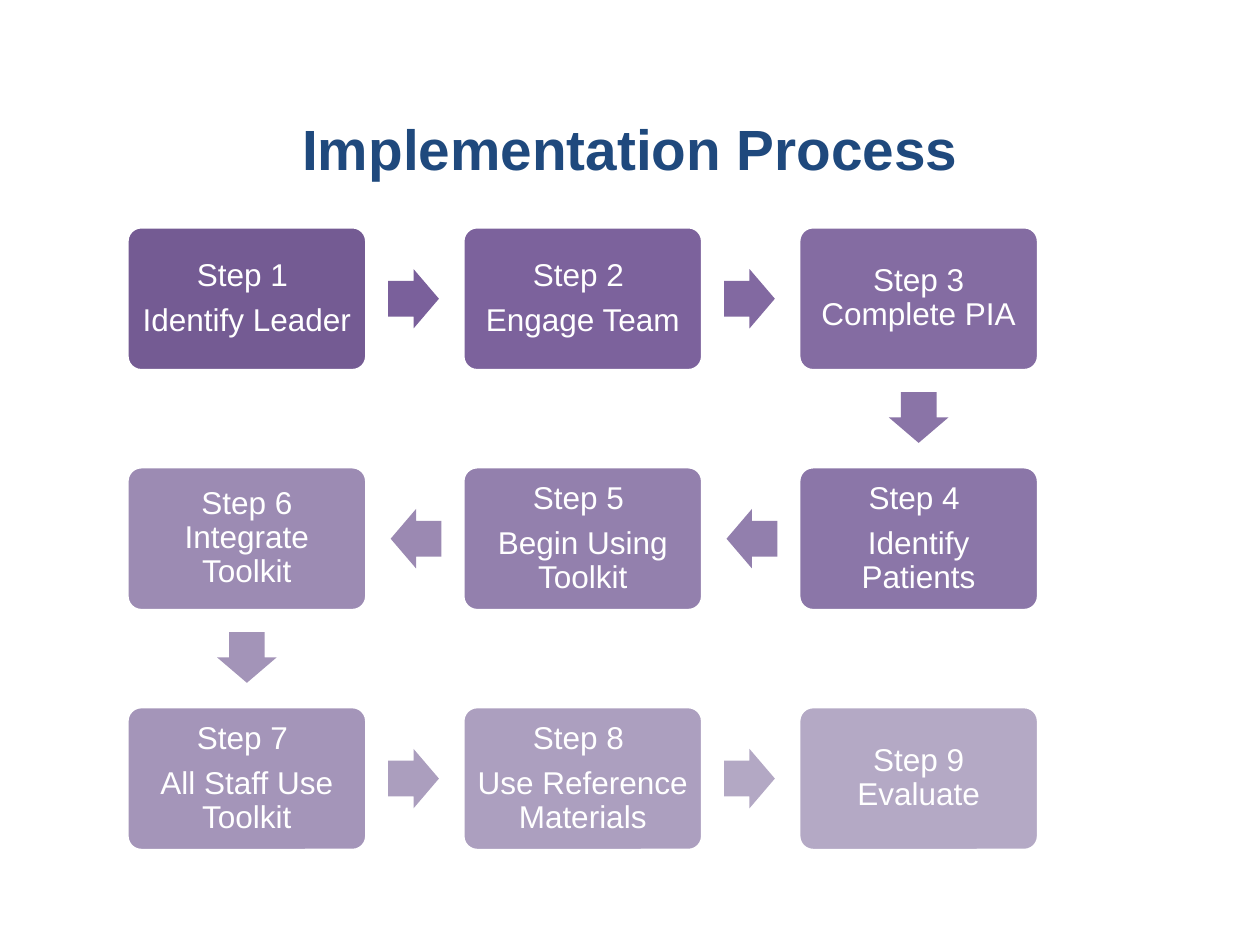
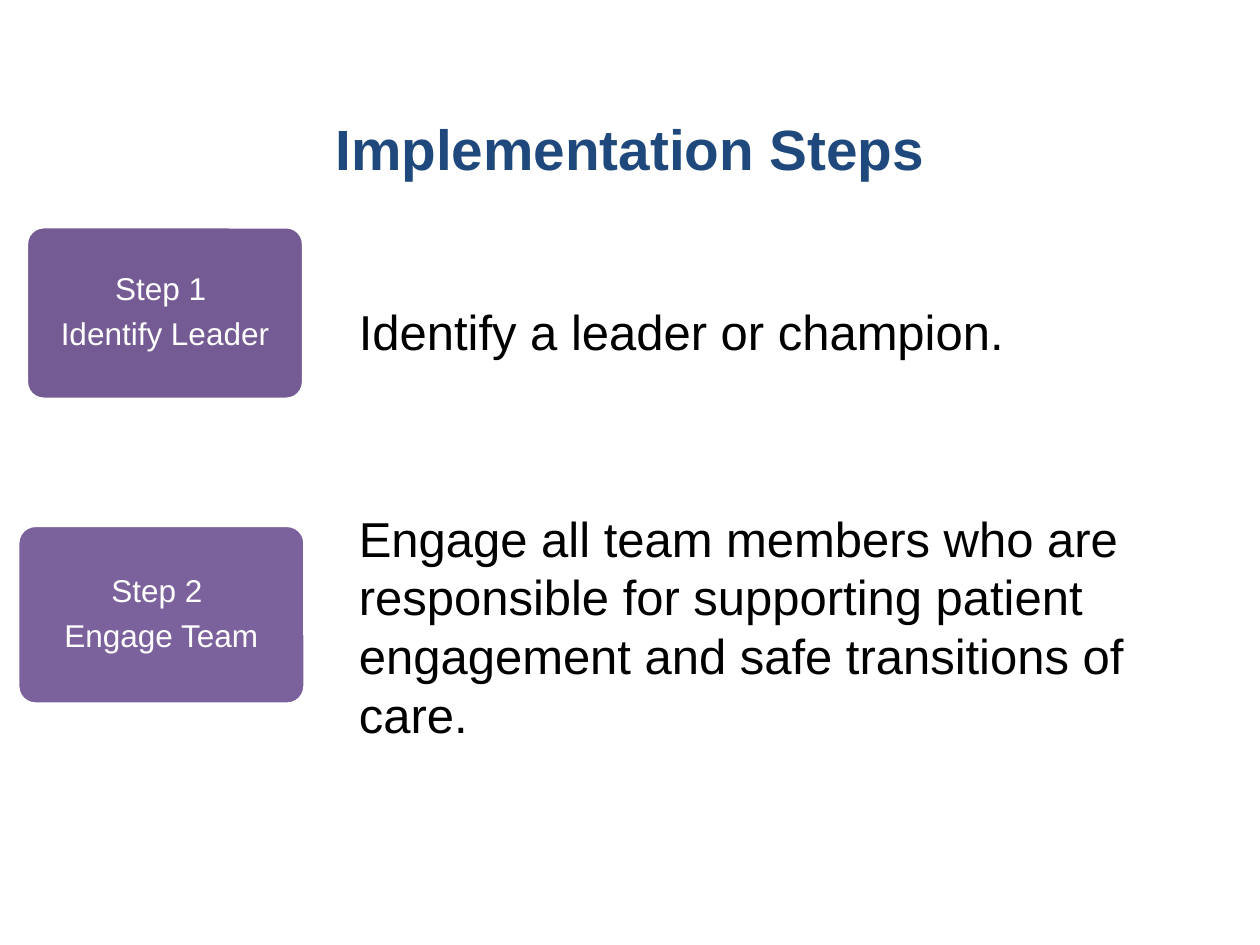
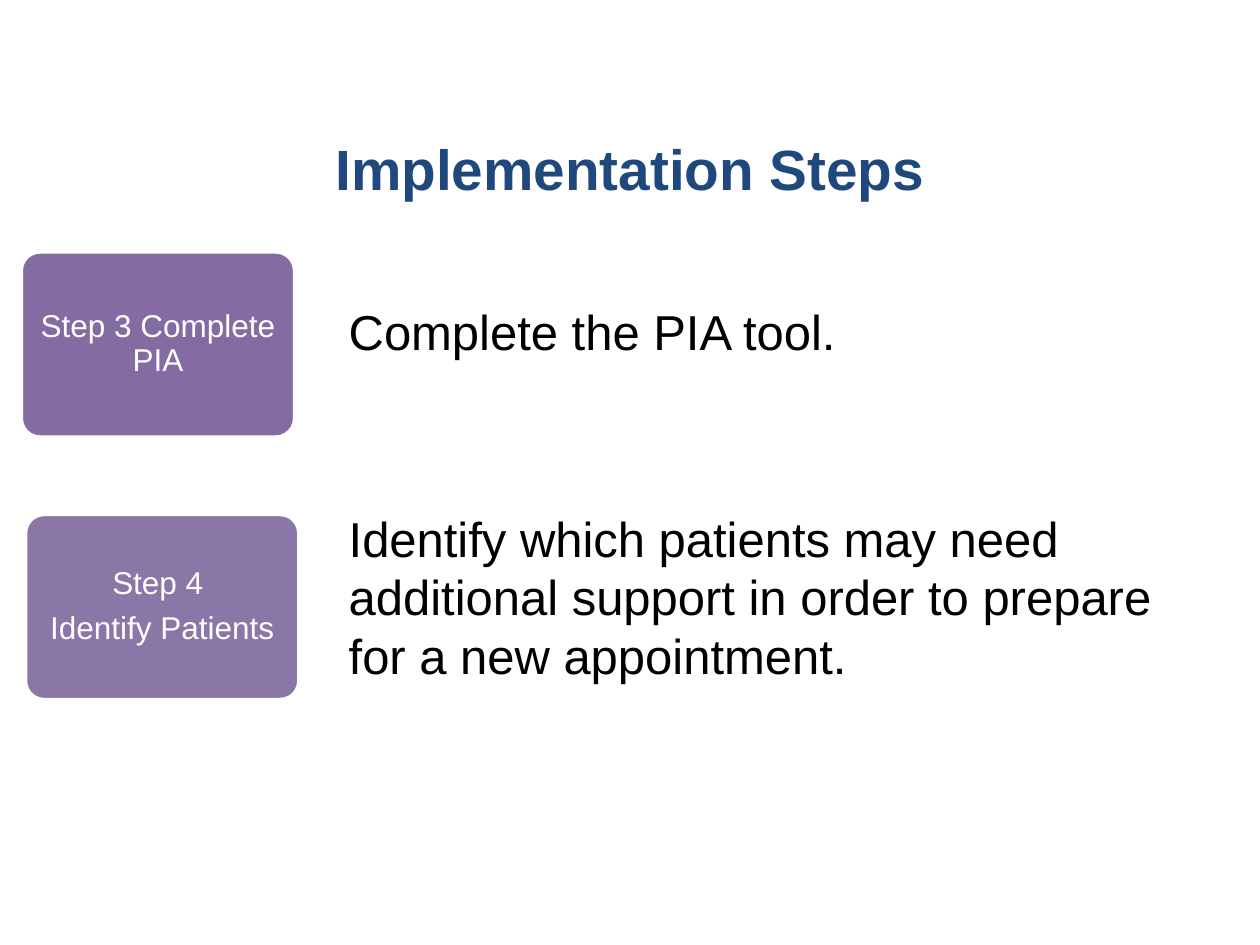
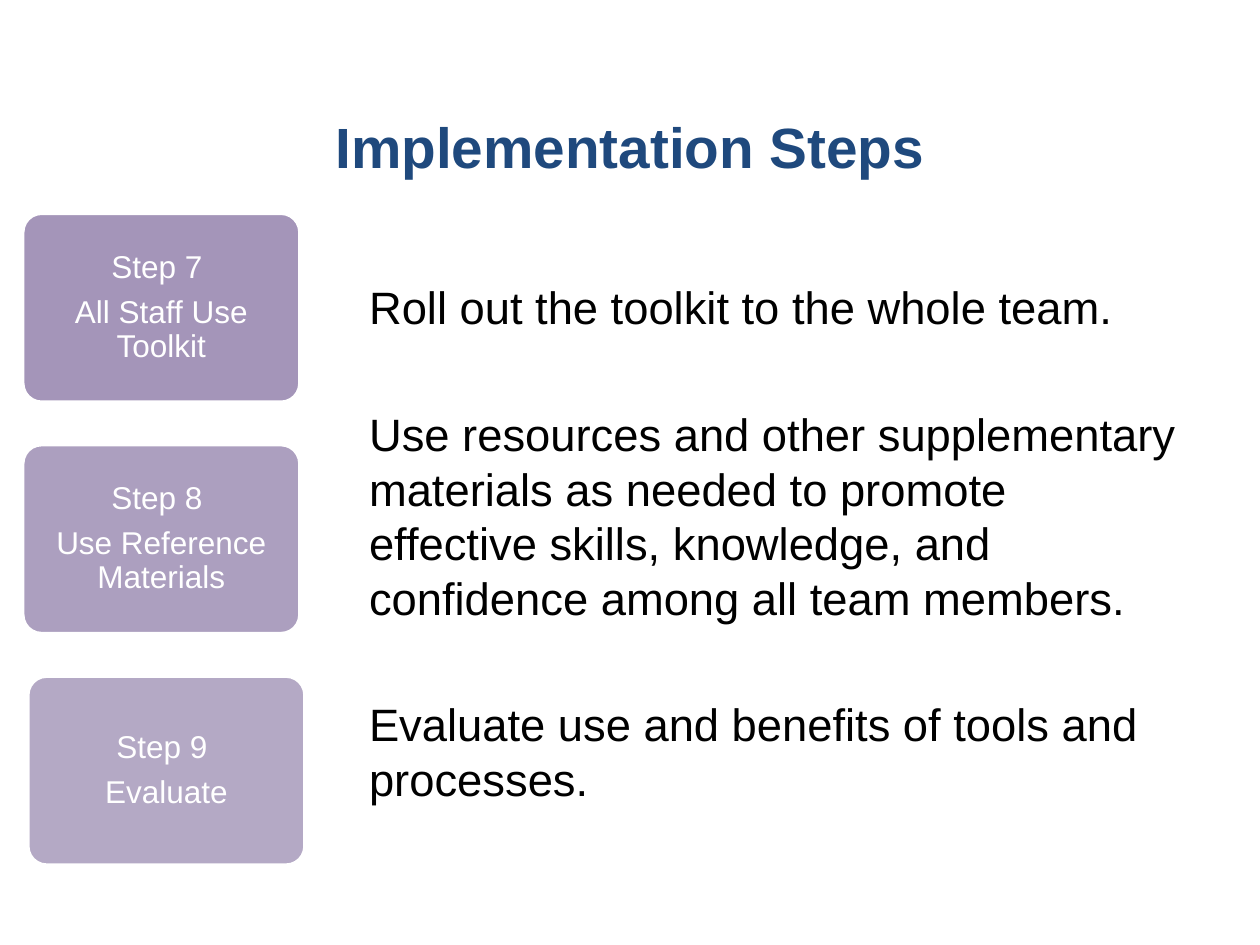
from pptx import Presentation
from pptx.dml.color import RGBColor
from pptx.enum.shapes import MSO_SHAPE
from pptx.enum.text import MSO_ANCHOR, PP_ALIGN
from pptx.util import Pt

ROUNDED = MSO_SHAPE.ROUNDED_RECTANGLE
ARROW = MSO_SHAPE.RIGHT_ARROW
MIDDLE, TOP = MSO_ANCHOR.MIDDLE, MSO_ANCHOR.TOP
CENTER, LEFT = PP_ALIGN.CENTER, PP_ALIGN.LEFT

WHITE = RGBColor(0xFF, 0xFF, 0xFF)
BLACK = RGBColor(0x00, 0x00, 0x00)
NAVY = RGBColor(0x1F, 0x49, 0x7D)
STEP_FILLS = [RGBColor.from_string(code) for code in (
    "745B93", "7C629C", "846CA2", "8B76A8", "9380AD", "9C8BB3", "A495B9", "AC9FBF", "B4A9C5")]
ARROW_FILLS = [RGBColor.from_string(code) for code in (
    "7A609B", "8269A1", "8A74A7", "927FAD", "9B89B2", "A394B8", "AB9EBE", "B3A8C4")]

TITLE_FONT = {"name": "Arial", "size": Pt(32.4), "bold": True}
STEP_FONT = {"name": "Arial", "size": Pt(18)}
STEP_FRAME = {"margin_left": Pt(5), "margin_right": Pt(5), "margin_top": Pt(5),
              "margin_bottom": Pt(5), "vertical_anchor": MIDDLE}
STEP_PARAGRAPH = {"alignment": CENTER, "line_spacing": 0.9, "space_after": Pt(6.3)}

STEPS = [
    ["Step 1 ", "Identify Leader"],
    ["Step 2 ", "Engage Team"],
    ["Step 3 Complete PIA"],
    ["Step 4 ", "Identify Patients"],
    ["Step 5 ", "Begin Using Toolkit"],
    ["Step 6 Integrate Toolkit"],
    ["Step 7 ", "All Staff Use Toolkit"],
    ["Step 8 ", "Use Reference Materials"],
    ["Step 9 Evaluate"],
]
SPLIT_LAST_STEP = ["Step 9 ", "Evaluate"]

GRID_LEFT, GRID_TOP, COLUMNS = 72.5, 129.6, 3
BOX_WIDTH, BOX_HEIGHT, GAP = 137.1, 82.26, 54.84
ARROW_WIDTH, ARROW_HEIGHT, ARROW_SHIFT = 29, 34, 0.7

DETAILS = [
    {"title_top": 59.8, "body": (198, 129.6, 486, 356.4), "body_inset": 42.9,
     "size": 28, "gap": 84.2,
     "boxes": [(0, 15.1, 129.6, 158.4, 98.6), (1, 10.1, 300.2, 164.2, 102.2)],
     "texts": ["Identify a leader or champion.",
               "Engage all team members who are responsible for supporting patient "
               "engagement and safe transitions of care."]},
    {"title_top": 71.3, "body": (192.2, 129.6, 491.8, 356.4), "body_inset": 42.9,
     "size": 28, "gap": 84.2,
     "boxes": [(2, 12.2, 144, 156.2, 105.8), (3, 14.6, 294, 156.2, 105.8)],
     "texts": ["Complete the PIA tool.",
               "Identify which patients may need additional support in order to prepare "
               "for a new appointment."]},
    {"title_top": 59, "body": (203.8, 156.2, 480.2, 329.8), "body_inset": 3.6,
     "size": 25.9, "gap": 41.4,
     "boxes": [(6, 13, 121.9, 158.4, 108), (7, 13, 254.1, 158.4, 108),
               (8, 15.9, 386.4, 158.4, 108)],
     "texts": ["Roll out the toolkit to the whole team.",
               "Use resources and other supplementary materials as needed to promote "
               "effective skills, knowledge, and confidence among all team members.",
               "Evaluate use and benefits of tools and processes."]},
]


def write_text(shape, lines, color, font_format, frame_format, paragraph_format, gap=0):
    frame = shape.text_frame
    frame.word_wrap = True
    for name, value in frame_format.items():
        setattr(frame, name, value)
    for index, line in enumerate(lines):
        paragraph = frame.add_paragraph() if index else frame.paragraphs[0]
        paragraph.text = line
        for name, value in paragraph_format.items():
            setattr(paragraph, name, value)
        if index and gap:
            paragraph.space_before = Pt(gap)
        for name, value in font_format.items():
            setattr(paragraph.runs[0].font, name, value)
        paragraph.runs[0].font.color.rgb = color


def add_step(slide, number, lines, left, top, width, height):
    box = slide.shapes.add_shape(ROUNDED, Pt(left), Pt(top), Pt(width), Pt(height))
    box.adjustments[0] = 0.1
    box.shadow.inherit = False
    box.fill.solid()
    box.fill.fore_color.rgb = STEP_FILLS[number]
    box.line.color.rgb = WHITE
    box.line.width = Pt(2)
    write_text(box, lines, WHITE, STEP_FONT, STEP_FRAME, STEP_PARAGRAPH)


presentation = Presentation()
presentation.slide_width, presentation.slide_height = Pt(720), Pt(540)
blank = presentation.slide_layouts[6]

titles = [("Implementation Process", 59.8)]
titles += [("Implementation Steps", detail["title_top"]) for detail in DETAILS]
for text, top in titles:
    slide = presentation.slides.add_slide(blank)
    title = slide.shapes.add_textbox(Pt(36), Pt(top), Pt(648), Pt(49))
    write_text(title, [text], NAVY, TITLE_FONT, {"vertical_anchor": MIDDLE},
               {"alignment": CENTER})

process_slide, *detail_slides = presentation.slides

corners = []
for number, lines in enumerate(STEPS):
    row, column = divmod(number, COLUMNS)
    if row % 2:
        column = COLUMNS - 1 - column
    left = GRID_LEFT + column * (BOX_WIDTH + GAP)
    top = GRID_TOP + row * (BOX_HEIGHT + GAP)
    corners.append((left, top))
    add_step(process_slide, number, lines, left, top, BOX_WIDTH, BOX_HEIGHT)

for (left, top), (next_left, next_top), fill in zip(corners, corners[1:], ARROW_FILLS):
    across = (next_left > left) - (next_left < left)
    down = int(next_top > top)
    center_x = (left + next_left + BOX_WIDTH) / 2 - ARROW_SHIFT * across
    center_y = (top + next_top + BOX_HEIGHT) / 2 - ARROW_SHIFT * down
    arrow = process_slide.shapes.add_shape(
        ARROW, Pt(center_x - ARROW_WIDTH / 2), Pt(center_y - ARROW_HEIGHT / 2),
        Pt(ARROW_WIDTH), Pt(ARROW_HEIGHT))
    arrow.adjustments[0], arrow.adjustments[1] = 0.6, 0.5
    arrow.rotation = 90 if down else 180 if across < 0 else 0
    arrow.shadow.inherit = False
    arrow.fill.solid()
    arrow.fill.fore_color.rgb = fill
    arrow.line.fill.background()

for slide, detail in zip(detail_slides, DETAILS):
    body = slide.shapes.add_textbox(*map(Pt, detail["body"]))
    write_text(body, detail["texts"], BLACK,
               {"name": "Arial", "size": Pt(detail["size"])},
               {"margin_top": Pt(detail["body_inset"]), "vertical_anchor": TOP},
               {"alignment": LEFT}, detail["gap"])
    for number, *place in detail["boxes"]:
        lines = SPLIT_LAST_STEP if number == len(STEPS) - 1 else STEPS[number]
        add_step(slide, number, lines, *place)

presentation.save("out.pptx")
